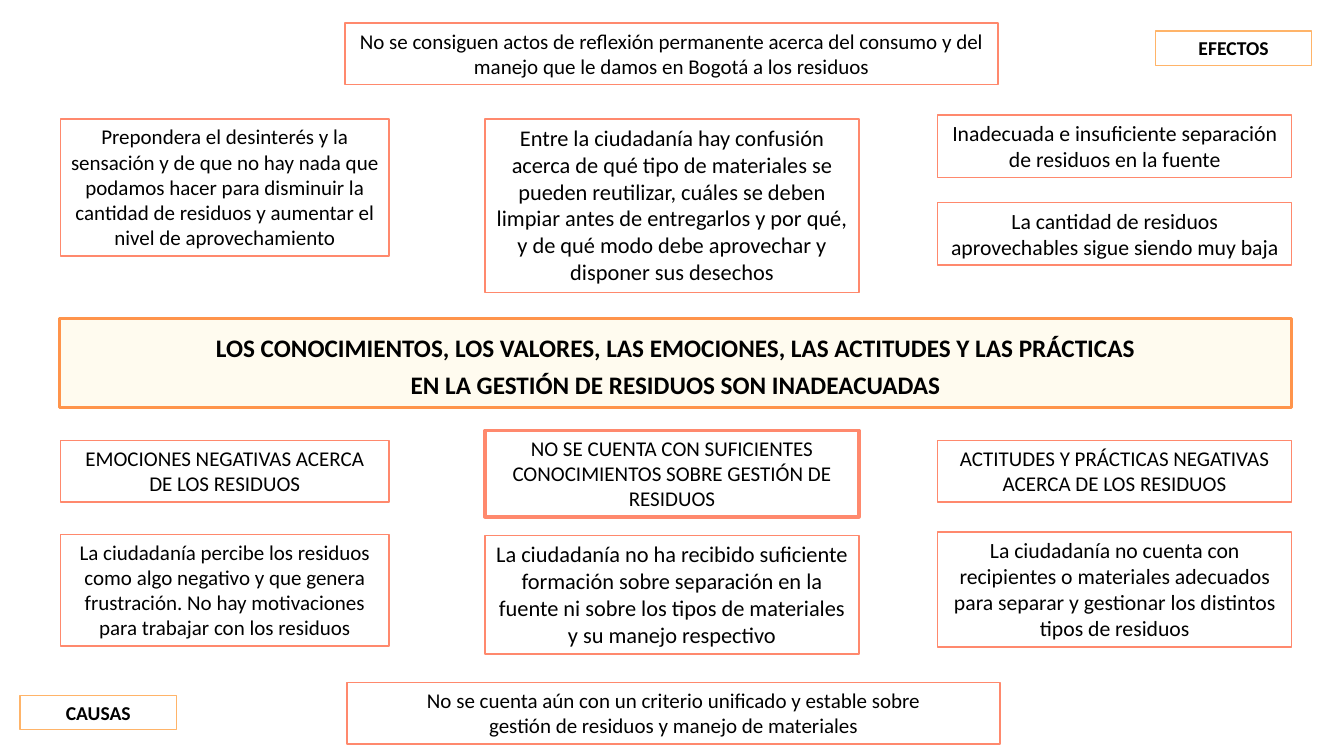
from pptx import Presentation
from pptx.dml.color import RGBColor
from pptx.enum.text import MSO_ANCHOR, MSO_AUTO_SIZE, PP_ALIGN
from pptx.util import Inches, Pt

CORAL, ORANGE, AMBER = "FF896D", "FF944B", "FFB469"
BLACK, WHITE, CREAM = "000000", "FFFFFF", "FFFBEF"

# Left edge and width of the three columns
EMOTIONS, KNOWLEDGE, PRACTICES = (0.6, 3.26), (4.81, 3.71), (9.3, 3.51)
TAG_WIDTH, BANNER_WIDTH = 1.55, 6.48


def color(value):
    return RGBColor.from_string(value)


class ProblemTree:
    font_name = "Calibri"

    def __init__(self, presentation):
        self.slide = presentation.slides.add_slide(presentation.slide_layouts[5])

    def style(self, shape, text, size, line, weight, fill=None, bold=False):
        if fill:
            shape.fill.solid()
            shape.fill.fore_color.rgb = color(fill)
        else:
            shape.fill.background()
        shape.line.color.rgb = color(line)
        shape.line.width = Pt(weight)
        shape.text_frame.word_wrap = True
        paragraph = shape.text_frame.paragraphs[0]
        paragraph.text = text
        paragraph.alignment = PP_ALIGN.CENTER
        paragraph.font.name = self.font_name
        paragraph.font.size = Pt(size)
        paragraph.font.bold = bold
        paragraph.font.color.rgb = color(BLACK)
        return paragraph

    def title(self, left, top, width, height, text):
        shape = self.slide.shapes.title
        shape.left, shape.top = Inches(left), Inches(top)
        shape.width, shape.height = Inches(width), Inches(height)
        paragraph = self.style(shape, text, 18, ORANGE, 2.25, CREAM, True)
        paragraph.line_spacing = 1.2
        shape.text_frame.vertical_anchor = MSO_ANCHOR.MIDDLE
        shape.text_frame.auto_size = MSO_AUTO_SIZE.NONE

    def box(self, left, top, width, height, text, size=15, line=CORAL,
            weight=1, fill=None, bold=False):
        shape = self.slide.shapes.add_textbox(
            Inches(left), Inches(top), Inches(width), Inches(height))
        self.style(shape, text, size, line, weight, fill, bold)
        shape.text_frame.auto_size = MSO_AUTO_SIZE.SHAPE_TO_FIT_TEXT

    def column_box(self, column, top, height, text, size=15, **options):
        left, width = column
        self.box(left, top, width, height, text, size, **options)

    def tag(self, left, top, text):
        self.box(left, top, TAG_WIDTH, 0.34, text, 14, AMBER, bold=True)

    def banner(self, left, top, text):
        self.box(left, top, BANNER_WIDTH, 0.61, text)


def main():
    presentation = Presentation()
    presentation.slide_width, presentation.slide_height = Inches(13.33), Inches(7.5)
    tree = ProblemTree(presentation)

    # Central problem
    tree.title(0.59, 3.16, 12.22, 0.88,
               "LOS CONOCIMIENTOS, LOS VALORES, LAS EMOCIONES, LAS ACTITUDES Y LAS PRÁCTICAS\v"
               "EN LA GESTIÓN DE RESIDUOS SON INADEACUADAS")

    # Effects
    tree.tag(11.46, 0.31, "EFECTOS")
    tree.banner(3.42, 0.23, "No se consiguen actos de reflexión permanente acerca del consumo "
                "y del manejo que le damos en Bogotá a los residuos")
    tree.column_box(EMOTIONS, 1.18, 1.36,
                    "Prepondera el desinterés y la sensación y de que no hay nada que podamos "
                    "hacer para disminuir la cantidad de residuos y aumentar el nivel de "
                    "aprovechamiento")
    tree.column_box(KNOWLEDGE, 1.18, 1.72,
                    "Entre la ciudadanía hay confusión acerca de qué tipo de materiales se "
                    "pueden reutilizar, cuáles se deben limpiar antes de entregarlos y por qué, "
                    "y de qué modo debe aprovechar y disponer sus desechos", 16)
    tree.column_box(PRACTICES, 1.14, 0.62,
                    "Inadecuada e insuficiente separación de residuos en la fuente", 15.5)
    tree.column_box(PRACTICES, 2.01, 0.62,
                    "La cantidad de residuos aprovechables sigue siendo muy baja", 15.5)

    # Direct causes
    tree.column_box(EMOTIONS, 4.37, 0.61, "EMOCIONES NEGATIVAS ACERCA\vDE LOS RESIDUOS")
    tree.column_box(KNOWLEDGE, 4.27, 0.86,
                    "NO SE CUENTA CON SUFICIENTES CONOCIMIENTOS SOBRE GESTIÓN DE RESIDUOS",
                    weight=2.25, fill=WHITE)
    tree.column_box(PRACTICES, 4.37, 0.61,
                    "ACTITUDES Y PRÁCTICAS NEGATIVAS ACERCA DE LOS RESIDUOS")

    # Underlying causes
    tree.column_box(EMOTIONS, 5.3, 1.11,
                    "La ciudadanía percibe los residuos como algo negativo y que genera "
                    "frustración. No hay motivaciones para trabajar con los residuos")
    tree.column_box(KNOWLEDGE, 5.31, 1.18,
                    "La ciudadanía no ha recibido suficiente formación sobre separación en la "
                    "fuente ni sobre los tipos de materiales y su manejo respectivo", 16)
    tree.column_box(PRACTICES, 5.28, 1.14,
                    "La ciudadanía no cuenta con recipientes o materiales adecuados para "
                    "separar y gestionar los distintos tipos de residuos", 15.5)
    tree.banner(3.44, 6.77, "No se cuenta aún con un criterio unificado y estable sobre\v"
                "gestión de residuos y manejo de materiales")
    tree.tag(0.2, 6.9, "CAUSAS")

    presentation.save("out.pptx")


if __name__ == "__main__":
    main()
